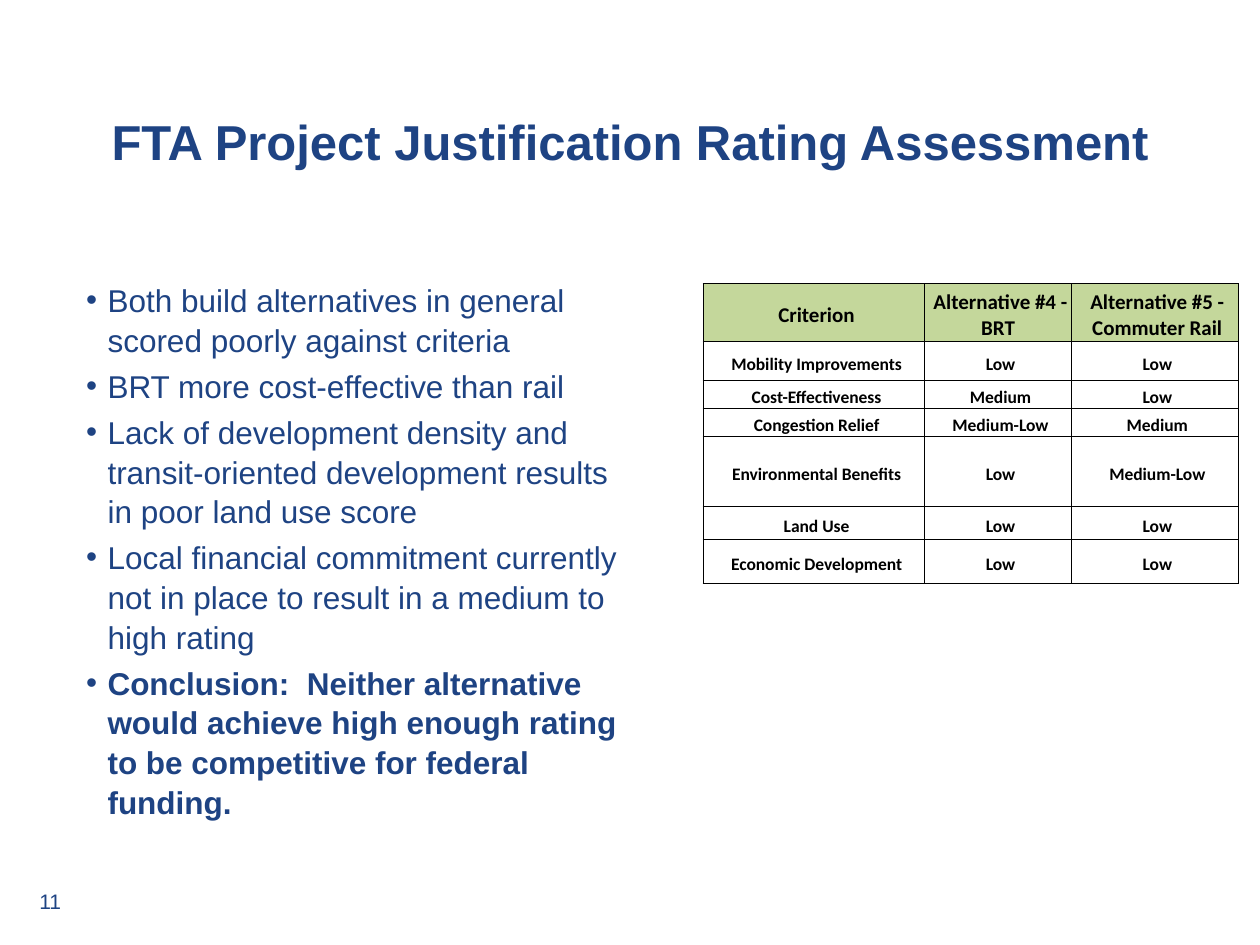
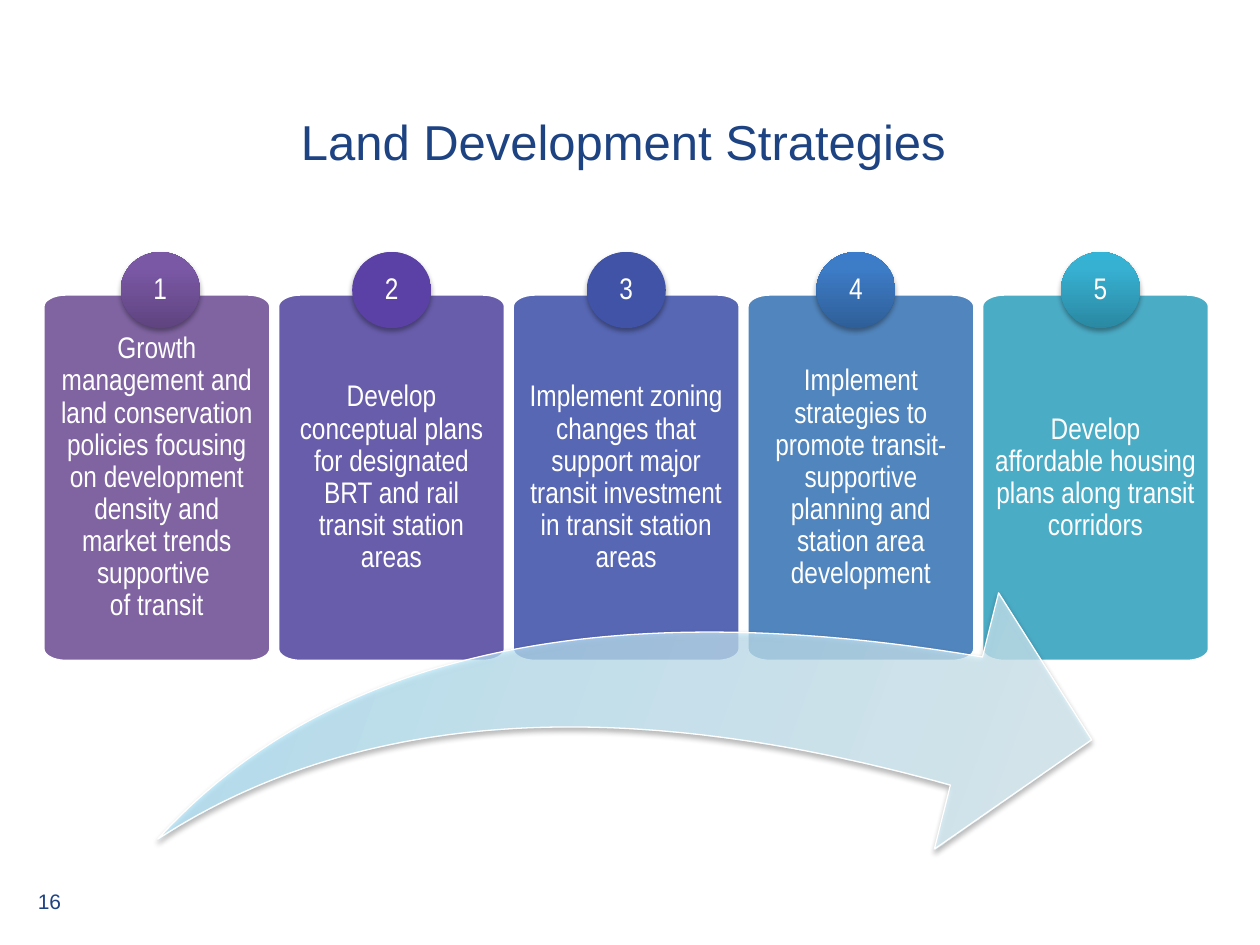
"""Build two transit study slides: a rating table and five land development strategies."""
from itertools import product
from math import cos, pi, sin

from lxml.etree import SubElement
from pptx import Presentation
from pptx.dml.color import RGBColor
from pptx.enum.shapes import MSO_SHAPE as SHAPE
from pptx.enum.text import MSO_ANCHOR as ANCHOR, MSO_AUTO_SIZE as AUTO, PP_ALIGN as ALIGN
from pptx.oxml.ns import qn
from pptx.util import Pt

rgb = RGBColor.from_string
NAVY, WHITE, BLACK, GREEN = "1E4383", "FFFFFF", "000000", "C4D79B"


def style(p, size, color, font="Arial", bold=False, align=ALIGN.CENTER):
    p.alignment = align
    for r in p.runs:
        r.font.size, r.font.name, r.font.bold = Pt(size), font, bold
        r.font.color.rgb = rgb(color)


def shade(sp, stops, angle, opacity, shadow_opacity):
    sp.shadow.inherit = False
    sp.fill.gradient()
    sp.fill.gradient_angle = angle
    spPr = sp._element.spPr
    gs_lst = spPr.find(qn("a:gradFill")).find(qn("a:gsLst"))
    for gs in list(gs_lst):
        gs_lst.remove(gs)
    for pos, color in stops:
        gs = SubElement(gs_lst, qn("a:gs"), pos=str(pos * 1000))
        clr = SubElement(gs, qn("a:srgbClr"), val=color)
        SubElement(clr, qn("a:alpha"), val=str(opacity * 1000))
    shadow = SubElement(spPr.find(qn("a:effectLst")), qn("a:outerShdw"), blurRad=str(Pt(3.1)),
                        dist=str(Pt(1.8)), dir="5400000", rotWithShape="0")
    clr = SubElement(shadow, qn("a:srgbClr"), val=BLACK)
    SubElement(clr, qn("a:alpha"), val=str(shadow_opacity * 1000))


prs = Presentation()
prs.slide_width, prs.slide_height = Pt(720), Pt(540)

slides = []
for layout, title, number, bold in [
    (1, "FTA Project Justification Rating Assessment", "11", True),
    (5, "Land Development Strategies ", "16", False),
]:
    s = prs.slides.add_slide(prs.slide_layouts[layout])
    slides.append(s)
    sp = s.shapes.title
    sp.left, sp.top, sp.width, sp.height = Pt(0), Pt(66), Pt(720), Pt(42)
    tf = sp.text_frame
    tf.text = title
    tf.auto_size, tf.vertical_anchor = AUTO.NONE, ANCHOR.TOP
    tf.paragraphs[0].line_spacing = Pt(28)
    style(tf.paragraphs[0], 28, NAVY, bold=bold)

    tf = s.shapes.add_textbox(Pt(6), Pt(504), Pt(36), Pt(21.6)).text_frame
    tf.word_wrap = True
    tf.text = number
    style(tf.paragraphs[0], 12, NAVY, align=ALIGN.RIGHT)

rating, strategies = slides

points = [
    "Both build alternatives in general scored poorly against criteria",
    "BRT more cost-effective than rail",
    "Lack of development density and transit-oriented development results in poor land use score",
    "Local financial commitment currently not in place to result in a medium to high rating",
    "Conclusion:  Neither alternative would achieve high enough rating to be competitive "
    "for federal funding.",
]
sp = rating.placeholders[1]
sp.left, sp.top, sp.width, sp.height = Pt(42), Pt(156), Pt(319), Pt(356)
tf = sp.text_frame
tf.text = "\n".join(points)
tf.auto_size = AUTO.NONE
for i, p in enumerate(tf.paragraphs):
    pPr = p._p.get_or_add_pPr()
    pPr.set("marL", str(Pt(12.25)))
    pPr.set("indent", str(-Pt(12.25)))
    p.line_spacing = 1.05
    p.space_before = Pt(3.6 if i else 0)
    style(p, 18, NAVY, bold=i == len(points) - 1, align=ALIGN.LEFT)

ratings = [
    ("Criterion", "Alternative #4 - BRT ", "Alternative #5 - Commuter Rail"),
    ("Mobility Improvements", "Low", "Low"),
    ("Cost-Effectiveness", "Medium", "Low"),
    ("Congestion Relief", "Medium-Low", "Medium"),
    ("Environmental Benefits", "Low", "Medium-Low"),
    ("Land Use", "Low", "Low"),
    ("Economic Development", "Low", "Low"),
]
col_widths = [126.75, 83.5, 95.75]
row_heights = [33, 22.5, 16, 16, 40, 19, 25]
table = rating.shapes.add_table(len(ratings), len(col_widths), Pt(401.75), Pt(162),
                                Pt(sum(col_widths)), Pt(sum(row_heights))).table
table.first_row = table.horz_banding = False
for col, width in zip(table.columns, col_widths):
    col.width = Pt(width)
for row, height in zip(table.rows, row_heights):
    row.height = Pt(height)
for i, j in product(range(len(ratings)), range(len(col_widths))):
    cell = table.cell(i, j)
    cell.text = ratings[i][j]
    cell.vertical_anchor = ANCHOR.MIDDLE
    cell.margin_left = cell.margin_top = Pt(3.6)
    cell.margin_right, cell.margin_bottom = Pt(0.7), Pt(0)
    style(cell.text_frame.paragraphs[0], 10 if i else 12, BLACK, "Calibri", True)
    tcPr = cell._tc.get_or_add_tcPr()
    for side in ("a:lnL", "a:lnR", "a:lnT", "a:lnB"):
        ln = SubElement(tcPr, qn(side), w=str(Pt(0.5)))
        SubElement(SubElement(ln, qn("a:solidFill")), qn("a:srgbClr"), val=BLACK)
    cell.fill.solid()
    cell.fill.fore_color.rgb = rgb(WHITE if i else GREEN)

cards = [
    ("8064A2", "Growth management and land conservation policies focusing on development "
               "density and market trends supportive \vof transit"),
    ("685DAB", "Develop conceptual plans for designated BRT and rail transit station areas"),
    ("5767B4", "Implement zoning changes that support major transit investment in transit "
               "station areas"),
    ("5185BD", "Implement strategies to promote transit-supportive planning and station area "
               "development"),
    ("4BACC6", "Develop affordable housing plans along transit corridors"),
]
card_w, card_h, card_top, pitch = 130.25, 210, 168, 134.1
corner_w, corner_h, steps = 13, 7.2, 8
for i, (color, text) in enumerate(cards):
    left = 24.5 + i * pitch
    outline = []
    for quarter, (right, bottom) in enumerate([(1, 1), (0, 1), (0, 0), (1, 0)]):
        cx = left + (card_w - corner_w if right else corner_w)
        cy = card_top + (card_h - corner_h if bottom else corner_h)
        for k in range(steps + 1):
            a = (quarter + k / steps) * pi / 2
            outline.append((Pt(cx + corner_w * cos(a)), Pt(cy + corner_h * sin(a))))
    builder = strategies.shapes.build_freeform(*outline[0])
    builder.add_line_segments(outline[1:], close=True)
    sp = builder.convert_to_shape()
    sp.shadow.inherit = False
    sp.fill.solid()
    sp.fill.fore_color.rgb = rgb(color)
    sp.line.color.rgb, sp.line.width = rgb(WHITE), Pt(2)
    tf = sp.text_frame
    tf.text = text
    tf.word_wrap, tf.vertical_anchor = True, ANCHOR.MIDDLE
    tf.margin_left = tf.margin_right = tf.margin_top = tf.margin_bottom = Pt(7.2)
    tf.paragraphs[0].line_spacing = 0.9
    style(tf.paragraphs[0], 17, WHITE, "Arial Narrow")

badges = [
    ("5", 606.25, ("2A88A2", "37B1D2", "34B4D6")),
    ("4", 466.5, ("2F5F99", "3D7CC7", "3A7CCB")),
    ("3", 335.25, ("4053A6", "4053A6", "4053A6")),
    ("2", 201.25, ("5B41A5", "5B41A5", "5B41A5")),
    ("1", 69, ("5F4480", "7B58A6", "7C57A8")),
]
for number, left, colors in badges:
    sp = strategies.shapes.add_shape(SHAPE.OVAL, Pt(left), Pt(144), Pt(45.25), Pt(43.5))
    shade(sp, zip((0, 80, 100), colors), 90, 100, 35)
    sp.line.fill.background()
    tf = sp.text_frame
    tf.text = number
    tf.vertical_anchor = ANCHOR.MIDDLE
    tf.margin_left = tf.margin_right = tf.margin_top = tf.margin_bottom = Pt(0)
    tf.paragraphs[0].line_spacing = 0.9
    style(tf.paragraphs[0], 17, WHITE, "Arial Narrow")

arrow = strategies.shapes.add_shape(SHAPE.SWOOSH_ARROW, Pt(127.5), Pt(273), Pt(480), Pt(300))
arrow.rotation = 20.5
arrow.adjustments[0] = arrow.adjustments[1] = 0.25
shade(arrow, [(0, "A7E6FF"), (35, "C1EDFF"), (100, "E7F8FF")], 0, 70, 38)
arrow.line.color.rgb, arrow.line.width = rgb(WHITE), Pt(0.75)

prs.save("out.pptx")
